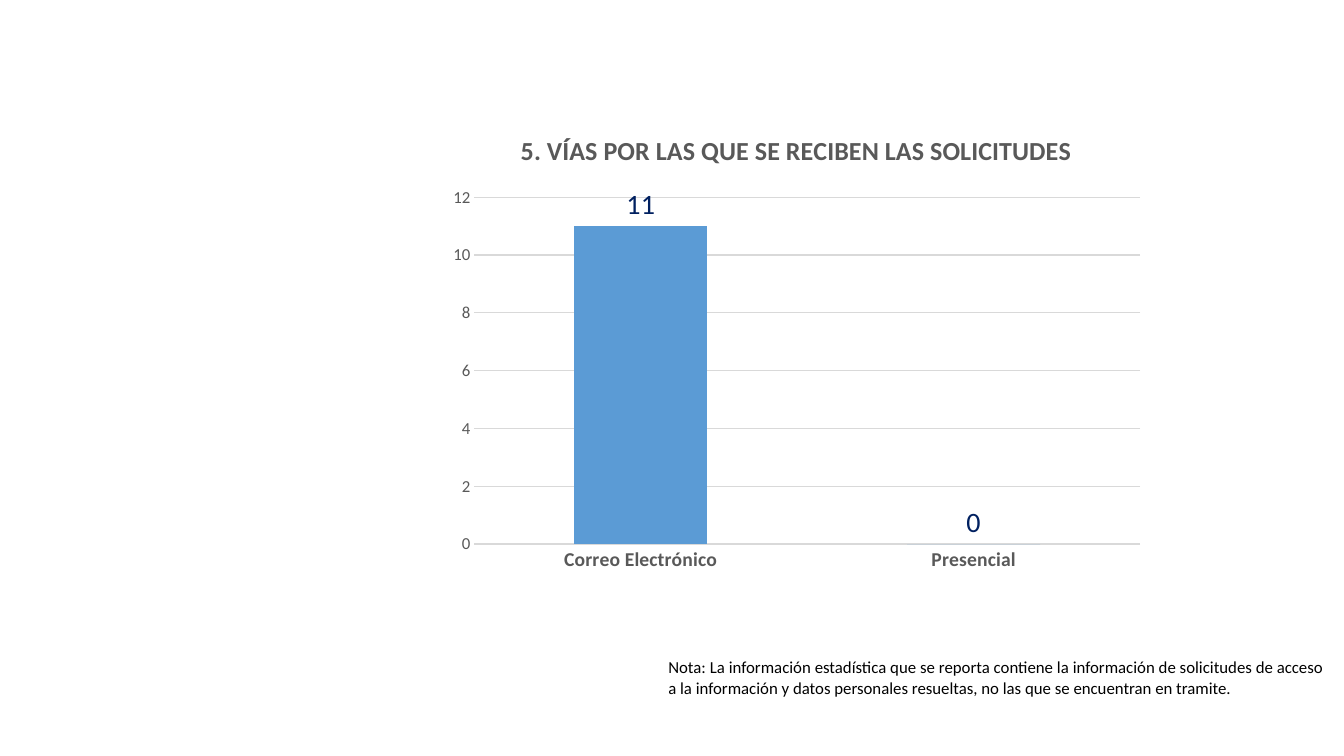
from typing import NamedTuple

from lxml.etree import SubElement
from pptx import Presentation
from pptx.chart.axis import CategoryAxis, ValueAxis
from pptx.chart.chart import Chart
from pptx.chart.data import CategoryChartData
from pptx.dml.color import RGBColor
from pptx.enum.chart import XL_CHART_TYPE, XL_LABEL_POSITION, XL_TICK_MARK
from pptx.enum.text import MSO_AUTO_SIZE, PP_ALIGN
from pptx.oxml.ns import qn
from pptx.slide import Slide
from pptx.text.text import Font
from pptx.util import Emu, Pt

EMU_PER_PX = 9144  # 100 px to the inch
FONT_NAME = "Calibri"
COLOURS = {
    "text": "000000",
    "muted": "595959",
    "grid": "D9D9D9",
    "bar": "5B9BD5",
    "value": "002060",
}
CHART_TITLE = "5. VÍAS POR LAS QUE SE RECIBEN LAS SOLICITUDES"
REQUESTS_BY_CHANNEL = {"Correo Electrónico": 11, "Presencial": 0}
NOTE = (
    "Nota: La información estadística que se reporta contiene la información de "
    "solicitudes de acceso a la información y datos personales resueltas, no las "
    "que se encuentran en tramite."
)
PLOT_LAYOUT = {
    "layoutTarget": "inner",
    "xMode": "edge",
    "yMode": "edge",
    "x": "0.05",
    "y": "0.18",
    "w": "0.93",
    "h": "0.74",
}


class Box(NamedTuple):
    left: int
    top: int
    width: int
    height: int

    def emu(self) -> list[Emu]:
        return [px(length) for length in self]


CHART_BOX = Box(435, 112, 710, 465)
NOTE_BOX = Box(653, 647, 670, 50)


def px(length: int) -> Emu:
    return Emu(length * EMU_PER_PX)


def colour(name: str) -> RGBColor:
    return RGBColor.from_string(COLOURS[name])


def style_font(font: Font, size: float, colour_name: str, bold: bool = False) -> None:
    font.name = FONT_NAME
    font.size = Pt(size)
    font.bold = bold
    font.color.rgb = colour(colour_name)


def style_axis(axis: CategoryAxis | ValueAxis, size: float, bold: bool) -> None:
    axis.major_tick_mark = XL_TICK_MARK.NONE
    axis.minor_tick_mark = XL_TICK_MARK.NONE
    axis.format.line.fill.background()
    style_font(axis.tick_labels.font, size, "muted", bold)


def place_plot(chart: Chart) -> None:
    """Fix the inner plot area as fractions of the chart frame."""
    plot_area = chart.element.find(f".//{qn('c:plotArea')}")
    for existing in plot_area.findall(qn("c:layout")):
        plot_area.remove(existing)
    layout = SubElement(plot_area, qn("c:layout"))
    plot_area.insert(0, layout)
    manual = SubElement(layout, qn("c:manualLayout"))
    for tag, value in PLOT_LAYOUT.items():
        SubElement(manual, qn(f"c:{tag}")).set("val", value)


def add_requests_chart(slide: Slide) -> None:
    chart_data = CategoryChartData(number_format="0")
    chart_data.categories = list(REQUESTS_BY_CHANNEL)
    chart_data.add_series(CHART_TITLE, list(REQUESTS_BY_CHANNEL.values()))
    chart = slide.shapes.add_chart(
        XL_CHART_TYPE.COLUMN_CLUSTERED, *CHART_BOX.emu(), chart_data
    ).chart
    style_font(chart.font, 10, "text")
    chart.has_legend = False

    chart.has_title = True
    title_paragraph = chart.chart_title.text_frame.paragraphs[0]
    title_paragraph.text = CHART_TITLE
    style_font(title_paragraph.font, 18.6, "muted", bold=True)
    chart.chart_title.include_in_layout = False

    style_axis(chart.category_axis, 14, bold=True)
    style_axis(chart.value_axis, 12, bold=False)
    chart.value_axis.minimum_scale = 0
    chart.value_axis.maximum_scale = 12
    chart.value_axis.major_unit = 2
    grid_line = chart.value_axis.major_gridlines.format.line
    grid_line.color.rgb = colour("grid")
    grid_line.width = Pt(0.75)

    plot = chart.plots[0]
    plot.gap_width = 150
    plot.vary_by_categories = False
    bar_fill = plot.series[0].format.fill
    bar_fill.solid()
    bar_fill.fore_color.rgb = colour("bar")
    labels = plot.series[0].data_labels
    labels.show_value = True
    labels.position = XL_LABEL_POSITION.OUTSIDE_END
    style_font(labels.font, 20, "value")
    place_plot(chart)


def add_note(slide: Slide) -> None:
    text_frame = slide.shapes.add_textbox(*NOTE_BOX.emu()).text_frame
    text_frame.word_wrap = True
    text_frame.auto_size = MSO_AUTO_SIZE.SHAPE_TO_FIT_TEXT
    paragraph = text_frame.paragraphs[0]
    paragraph.text = NOTE
    paragraph.alignment = PP_ALIGN.JUSTIFY
    style_font(paragraph.font, 12, "text")


def main() -> None:
    presentation = Presentation()
    presentation.slide_width = px(1333)
    presentation.slide_height = px(750)
    slide = presentation.slides.add_slide(presentation.slide_layouts[6])
    add_note(slide)
    add_requests_chart(slide)
    presentation.save("out.pptx")


if __name__ == "__main__":
    main()
